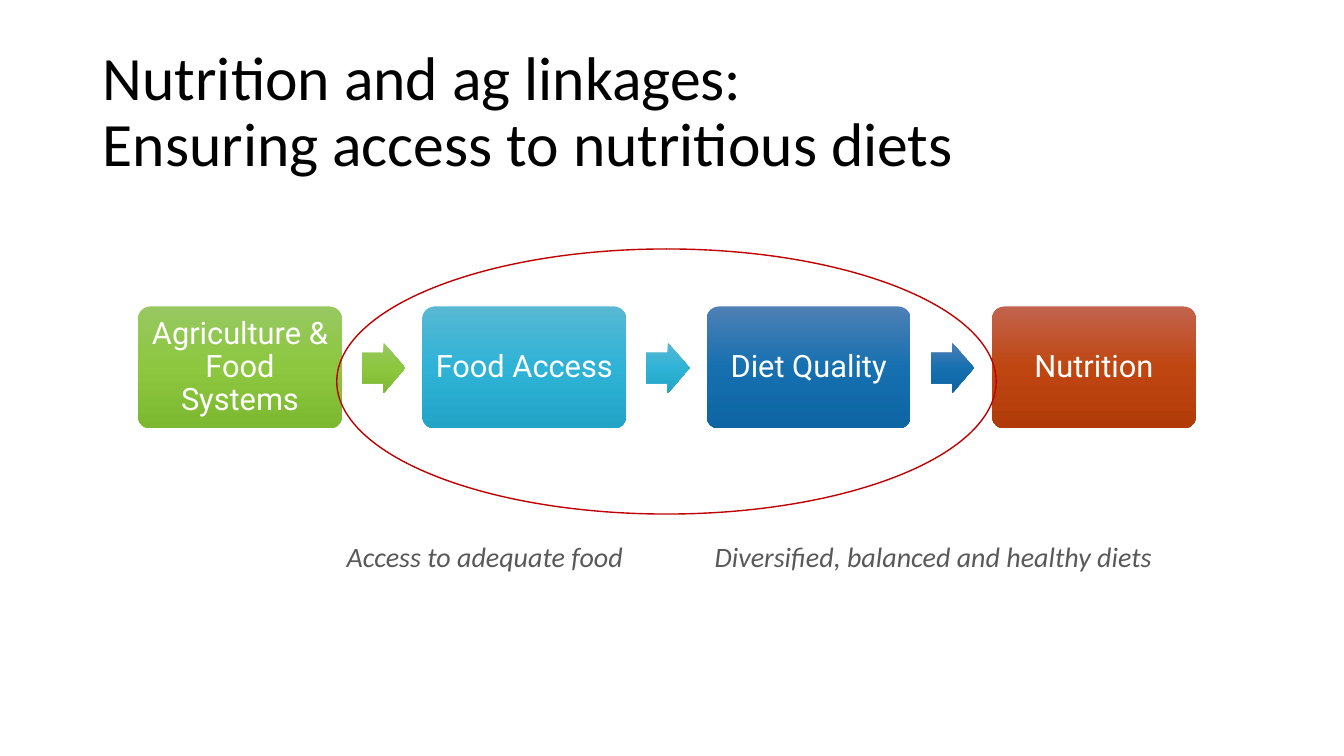
from copy import deepcopy

from pptx import Presentation
from pptx.dml.color import RGBColor
from pptx.enum.shapes import MSO_SHAPE
from pptx.enum.text import MSO_ANCHOR, PP_ALIGN
from pptx.oxml.ns import qn
from pptx.util import Pt

PX = 9144  # EMU: 100 px to the inch

COLORS = {
    "title": "000000",
    "label": "FFFFFF",
    "note": "595959",
    "ring": "C00000",
    "green": ("98C862", "8CC73F", "7DB831"),
    "cyan": ("59B8D4", "2EB3D6", "21A4C6"),
    "blue": ("4E80B5", "1670B0", "0D65A3"),
    "rust": ("C2634D", "BF4611", "B13B08"),
}
STEPS = [
    ("Agriculture & Food Systems", "green"),
    ("Food Access", "cyan"),
    ("Diet Quality", "blue"),
    ("Nutrition", "rust"),
]
NOTES = [
    (334, "Access to adequate food"),
    (699, "Diversified, balanced and healthy diets"),
]


def rgb(name):
    return RGBColor.from_string(COLORS[name])


def place(*lengths):
    return [n * PX for n in lengths]


def style(par, font, size, color):
    par.font.name = font
    par.font.size = Pt(size)
    par.font.color.rgb = rgb(color)


def shade(shape, color):
    """Fill from top to bottom with the three stops of a colour."""
    fill = shape.fill
    fill.gradient()
    fill.gradient_angle = 270
    stops = shape._element.spPr.find(".//" + qn("a:gsLst"))
    stops.insert(1, deepcopy(stops[0]))
    for i, (stop, tone) in enumerate(zip(fill.gradient_stops, COLORS[color])):
        stop.position = i / 2
        stop.color.rgb = RGBColor.from_string(tone)


def add_solid(slide, kind, box, color):
    shape = slide.shapes.add_shape(kind, *place(*box))
    shape.shadow.inherit = False
    shape.line.fill.background()
    shade(shape, color)
    return shape


def add_step(slide, left, text, color):
    box = (left, 304, 202, 121)
    shape = add_solid(slide, MSO_SHAPE.ROUNDED_RECTANGLE, box, color)
    shape.adjustments[0] = 0.1
    frame = shape.text_frame
    frame.word_wrap = True
    frame.vertical_anchor = MSO_ANCHOR.MIDDLE
    frame.margin_left = frame.margin_right = 9 * PX
    frame.margin_top = frame.margin_bottom = 9 * PX
    frame.text = text
    par = frame.paragraphs[0]
    par.alignment = PP_ALIGN.CENTER
    par.line_spacing = 0.9
    style(par, "Roboto", 22, "label")


def add_arrow(slide, left, color):
    box = (left, 340, 43, 50)
    shape = add_solid(slide, MSO_SHAPE.RIGHT_ARROW, box, color)
    shape.adjustments[0] = 0.6
    shape.adjustments[1] = 0.5


def add_ring(slide):
    ring = slide.shapes.add_shape(MSO_SHAPE.OVAL, *place(334, 247, 654, 263))
    ring.shadow.inherit = False
    ring.fill.background()
    ring.line.color.rgb = rgb("ring")
    ring.line.width = Pt(1)


def add_note(slide, left, text):
    frame = slide.shapes.add_textbox(*place(left, 530, 543, 44)).text_frame
    frame.word_wrap = True
    frame.text = text
    par = frame.paragraphs[0]
    par.font.italic = True
    style(par, "Calibri", 20, "note")


def set_title(slide, text):
    title = slide.shapes.title
    title.left, title.top, title.width, title.height = place(92, 40, 1150, 145)
    frame = title.text_frame
    frame.vertical_anchor = MSO_ANCHOR.MIDDLE
    frame.text = text
    par = frame.paragraphs[0]
    par.alignment = PP_ALIGN.LEFT
    par.line_spacing = 0.9
    style(par, "Calibri", 44, "title")


def main():
    deck = Presentation()
    deck.slide_width, deck.slide_height = place(1333, 750)
    slide = deck.slides.add_slide(deck.slide_layouts[5])
    set_title(slide, "Nutrition and ag linkages: \vEnsuring access to nutritious diets")
    for i, (text, color) in enumerate(STEPS):
        left = 137 + i * 847 // 3
        add_step(slide, left, text, color)
        if i < len(STEPS) - 1:
            add_arrow(slide, left + 222, color)
    add_ring(slide)
    for left, text in NOTES:
        add_note(slide, left, text)
    deck.save("out.pptx")


if __name__ == "__main__":
    main()
